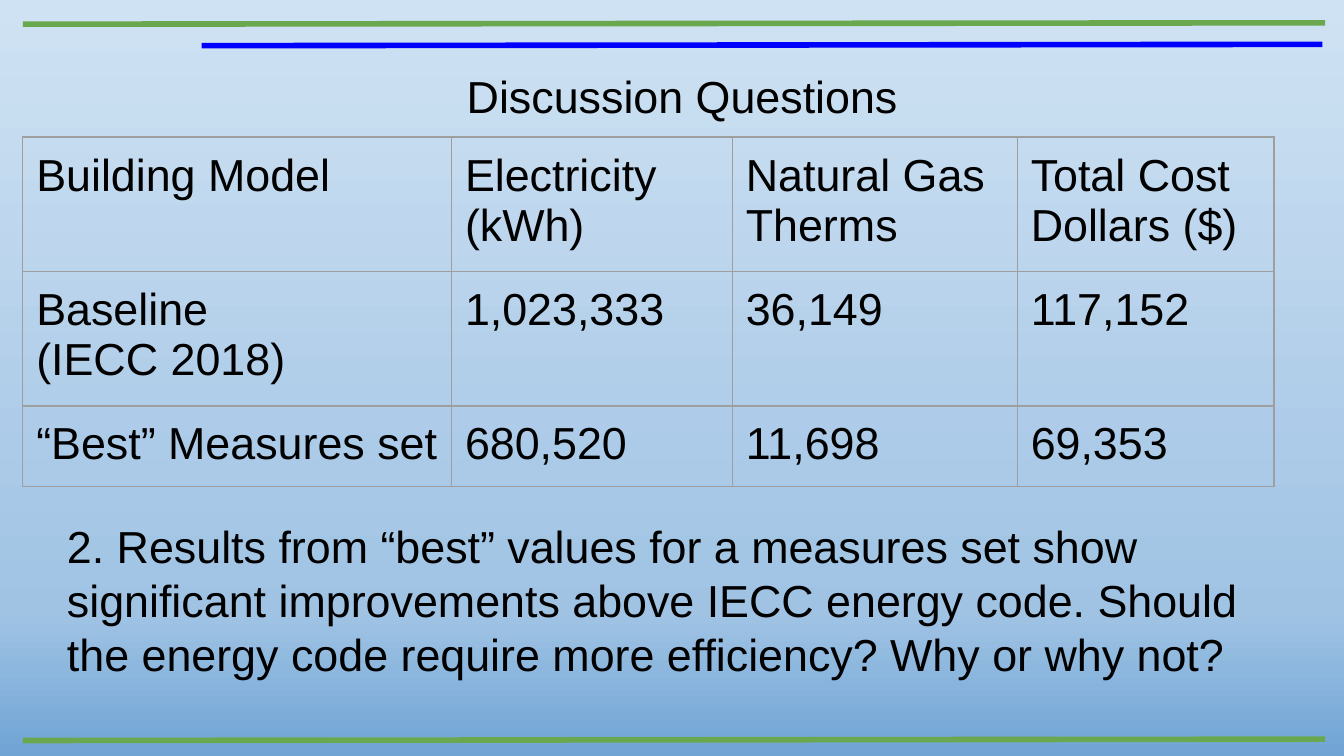
from copy import deepcopy
from dataclasses import dataclass

from lxml import etree
from pptx import Presentation
from pptx import util as u
from pptx.dml.color import RGBColor
from pptx.enum import shapes, text
from pptx.oxml.ns import qn


@dataclass(frozen=True)
class Theme:
    font: str = "Arial"
    size: float = 24
    ink: str = "000000"
    green: str = "6AA84F"
    blue: str = "0000FF"
    grid: str = "9E9E9E"
    rule_width: float = 3
    grid_width: float = 0.75
    inset: float = 0.1
    sky: tuple = ((0, "CFE2F3"), (0.81, "A0C3E4"), (1, "70A4D5"))


THEME = Theme()
WIDTH = 10
HEIGHT = WIDTH * 9 / 16
RULES = (
    (0.17, 0.18, 9.86, THEME.green),
    (0.17, 5.51, 9.86, THEME.green),
    (1.5, 0.34, 9.84, THEME.blue),
)
COLUMNS = (3.19, 2.09, 2.12, 1.91)
ROWS = (1, 1, 0.6)
RESULTS = (
    ("Building Model", "Electricity\n(kWh)", "Natural Gas\nTherms", "Total Cost\nDollars ($)"),
    ("Baseline\n(IECC 2018)", "1,023,333", "36,149", "117,152"),
    ("“Best” Measures set", "680,520", "11,698", "69,353"),
)
QUESTION = (
    "2. Results from “best” values for a measures set show significant "
    "improvements above IECC energy code. Should the energy code require "
    "more efficiency? Why or why not?"
)


def inches(values):
    return [u.Inches(value) for value in values]


def set_all(target, values):
    for name, value in values.items():
        setattr(target, name, value)


def margins():
    return {f"margin_{side}": u.Inches(THEME.inset) for side in ("left", "top", "right", "bottom")}


def write(frame, words, **para_format):
    frame.text = words
    for para in frame.paragraphs:
        set_all(para, para_format)
        for span in para.runs:
            set_all(span.font, {"name": THEME.font, "size": u.Pt(THEME.size)})
            span.font.color.rgb = RGBColor.from_string(THEME.ink)


def paint_background(page):
    fill = page.background.fill
    fill.gradient()
    fill.gradient_angle = 270
    stop_list = page.element.find(".//" + qn("a:gsLst"))
    stop_list.insert(1, deepcopy(stop_list[0]))
    for stop, (position, color) in zip(fill.gradient_stops, THEME.sky):
        stop.position = position
        stop.color.rgb = RGBColor.from_string(color)


def add_rule(page, left, top, right, color):
    """Draw a rule that rises slightly to the right."""
    ends = inches((left, top, right, top - 0.01))
    rule = page.shapes.add_connector(shapes.MSO_CONNECTOR.STRAIGHT, *ends)
    rule.line.color.rgb = RGBColor.from_string(color)
    rule.line.width = u.Pt(THEME.rule_width)
    etree.SubElement(rule.element.spPr, qn("a:effectLst"))


def add_words(page, box, words, **para_format):
    frame = page.shapes.add_textbox(*inches(box)).text_frame
    set_all(frame, {"word_wrap": True, **margins()})
    write(frame, words, **para_format)


def outline(cell):
    properties = cell._tc.get_or_add_tcPr()
    for index, side in enumerate(("lnL", "lnR", "lnT", "lnB")):
        border = etree.Element(qn(f"a:{side}"), w=str(u.Pt(THEME.grid_width)))
        fill = etree.SubElement(border, qn("a:solidFill"))
        etree.SubElement(fill, qn("a:srgbClr"), val=THEME.grid)
        properties.insert(index, border)


def add_results(page, left, top):
    box = inches((left, top, sum(COLUMNS), sum(ROWS)))
    table = page.shapes.add_table(len(ROWS), len(COLUMNS), *box).table
    set_all(table, {"first_row": False, "horz_banding": False})
    for column, width in zip(table.columns, COLUMNS):
        column.width = u.Inches(width)
    for row, height, entries in zip(table.rows, ROWS, RESULTS):
        row.height = u.Inches(height)
        for cell, words in zip(row.cells, entries):
            set_all(cell, margins())
            cell.fill.background()
            outline(cell)
            write(cell.text_frame, words)


def build_discussion(deck):
    page = deck.slides.add_slide(deck.slide_layouts[6])
    paint_background(page)
    for rule in RULES:
        add_rule(page, *rule)
    add_words(page, (0.46, 0.41, 9.23, 0.61), "Discussion Questions",
              alignment=text.PP_ALIGN.CENTER)
    add_words(page, (0.4, 3.76, 9.23, 1.41), QUESTION)
    add_results(page, 0.17, 1.02)


def main():
    deck = Presentation()
    set_all(deck, {"slide_width": u.Inches(WIDTH), "slide_height": u.Inches(HEIGHT)})
    build_discussion(deck)
    deck.save("out.pptx")


if __name__ == "__main__":
    main()
